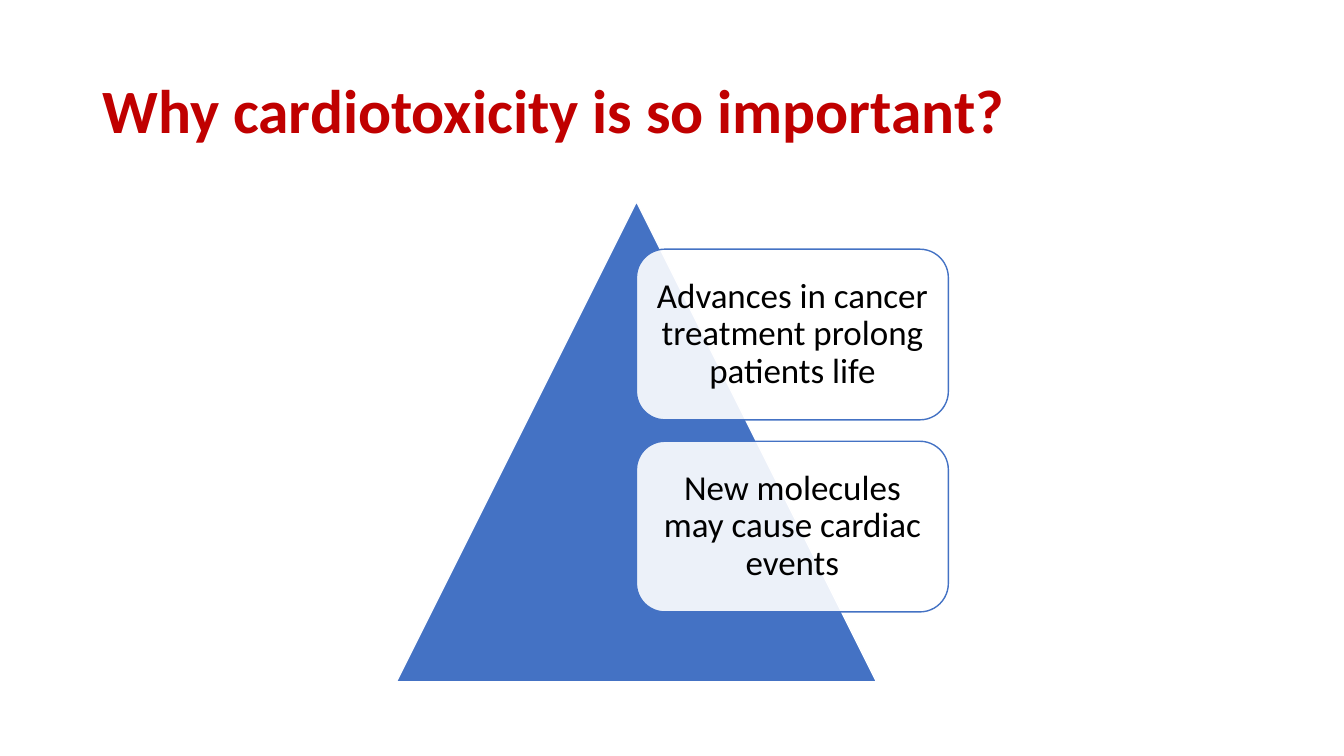
from dataclasses import dataclass

from lxml.etree import SubElement
from pptx import Presentation
from pptx.dml.color import RGBColor
from pptx.enum.shapes import MSO_SHAPE as Shape
from pptx.enum.text import MSO_ANCHOR as Anchor, PP_ALIGN as Align
from pptx.oxml.ns import qn
from pptx.util import Cm, Pt

BLUE, WHITE, BLACK, RED = "4472C4", "FFFFFF", "000000", "C00000"
TITLE_FONT = {"name": "Calibri", "size": Pt(44), "bold": True}
CARD_FONT = {"name": "Calibri", "size": Pt(25), "bold": False}
CARD_MARGINS = {f"margin_{side}": Cm(0.25) for side in ("left", "top", "right", "bottom")}


@dataclass
class Block:
    kind: Shape
    left: float
    top: float
    width: float
    height: float
    fill: str
    line: str
    opacity: int = 100
    text: str = ""


def rgb(color: str) -> RGBColor:
    return RGBColor.from_string(color)


def write(sp, text: str, font: dict, color: str, align: Align) -> None:
    tf = sp.text_frame
    tf.word_wrap = True
    tf.vertical_anchor = Anchor.MIDDLE
    p = tf.paragraphs[0]
    p.alignment = align
    p.line_spacing = 0.9
    r = p.add_run()
    r.text = text
    for name, value in font.items():
        setattr(r.font, name, value)
    r.font.color.rgb = rgb(color)


def draw(slide, block: Block) -> None:
    sp = slide.shapes.add_shape(block.kind, Cm(block.left), Cm(block.top),
                                Cm(block.width), Cm(block.height))
    sp.shadow.inherit = False
    sp.fill.solid()
    sp.fill.fore_color.rgb = rgb(block.fill)
    sp.line.color.rgb = rgb(block.line)
    sp.line.width = Pt(1)
    if block.opacity < 100:
        color = sp.fill._xPr.find(qn("a:solidFill"))[0]
        SubElement(color, qn("a:alpha")).set("val", str(block.opacity * 1000))
    if block.text:
        for name, value in CARD_MARGINS.items():
            setattr(sp.text_frame, name, value)
        write(sp, block.text, CARD_FONT, BLACK, Align.CENTER)


def main() -> None:
    prs = Presentation()
    prs.slide_width, prs.slide_height = Cm(33.87), Cm(19.05)
    slide = prs.slides.add_slide(prs.slide_layouts[6])

    # Title
    title = slide.shapes.add_textbox(Cm(2.33), Cm(1.01), Cm(29.21), Cm(3.68))
    write(title, "Why cardiotoxicity is so important?", TITLE_FONT, RED, Align.LEFT)

    # Pyramid
    draw(slide, Block(Shape.ISOSCELES_TRIANGLE, 9.99, 5.08, 12.1, 12.1, BLUE, WHITE))

    # Reason cards, stacked from the pyramid's axis
    reasons = ["Advances in cancer treatment prolong patients life",
               "New molecules may cause cardiac events"]
    for i, reason in enumerate(reasons):
        draw(slide, Block(Shape.ROUNDED_RECTANGLE, 16.04, 6.28 + i * 4.84, 7.86, 4.3,
                          WHITE, BLUE, 90, reason))

    prs.save("out.pptx")


if __name__ == "__main__":
    main()
